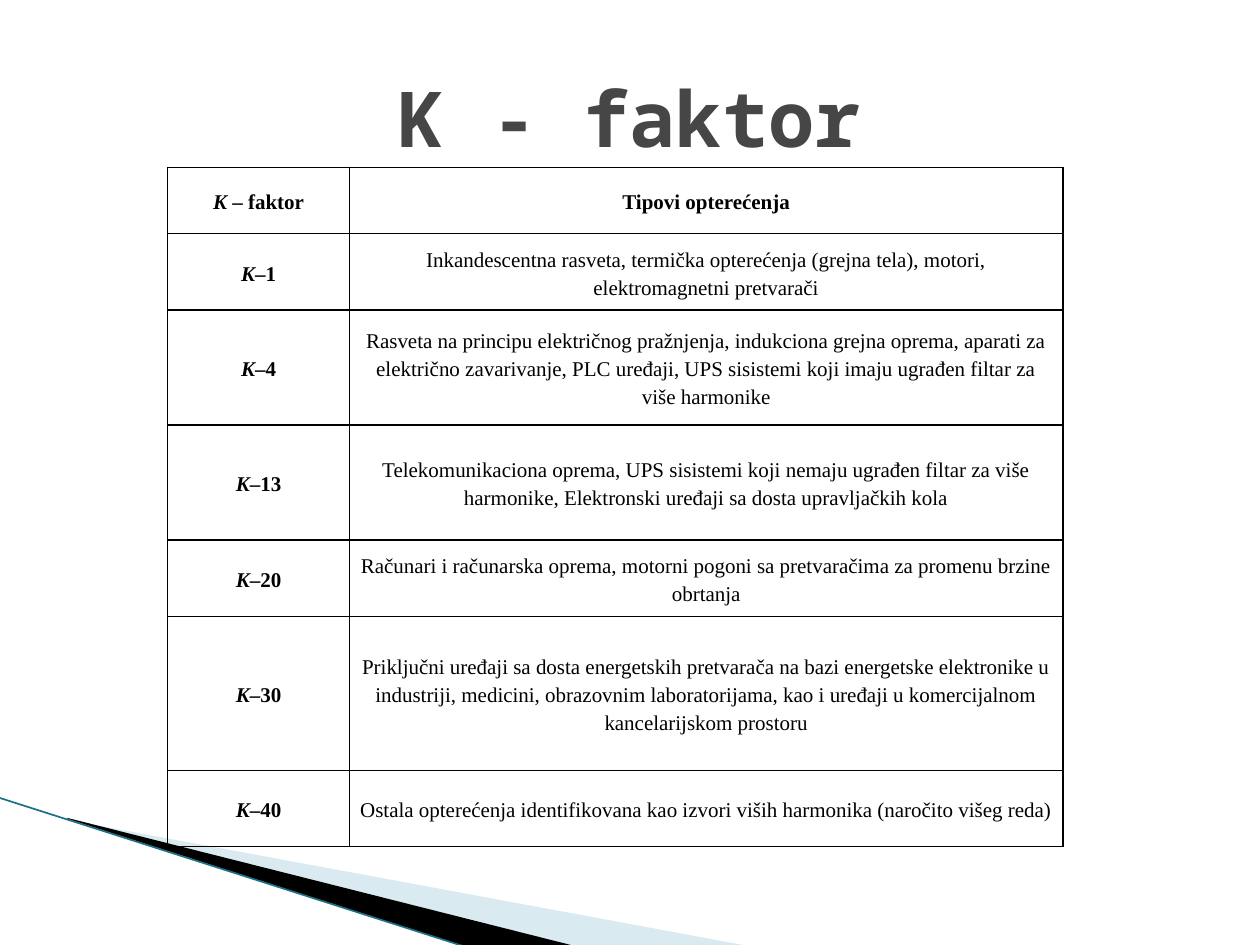
from lxml.etree import SubElement
from pptx import Presentation
from pptx.dml.color import RGBColor
from pptx.enum.shapes import MSO_CONNECTOR
from pptx.enum.text import MSO_ANCHOR, PP_ALIGN
from pptx.oxml.ns import qn
from pptx.util import Pt

COLORS = {
    "title": "464646",
    "text": "000000",
    "border": "000000",
    "pale": "A0CBDC",
    "dark": "000000",
    "edge": "1B7085",
}
TITLE = "K - faktor"
HEADER = (("K ", "– faktor"), "Tipovi opterećenja")
ROWS = [
    (37.8, *HEADER),
    (43.8, ("K", "–1"), "Inkandescentna rasveta, termička opterećenja (grejna tela), motori, elektromagnetni pretvarači"),
    (65.6, ("K", "–4"), "Rasveta na principu električnog pražnjenja, indukciona grejna oprema, aparati za električno zavarivanje, PLC uređaji, UPS sisistemi koji imaju ugrađen filtar za više harmonike"),
    (65.8, ("K", "–13"), "Telekomunikaciona oprema, UPS sisistemi koji nemaju ugrađen filtar za više harmonike, Elektronski uređaji sa dosta upravljačkih kola"),
    (43.8, ("K", "–20"), "Računari i računarska oprema, motorni pogoni sa pretvaračima za promenu brzine obrtanja"),
    (87.8, ("K", "–30"), "Priključni uređaji sa dosta energetskih pretvarača na bazi energetske elektronike u industriji, medicini, obrazovnim laboratorijama, kao i uređaji u komercijalnom kancelarijskom prostoru"),
    (43.6, ("K", "–40"), "Ostala opterećenja identifikovana kao izvori viših harmonika (naročito višeg reda)"),
]
COLUMNS = [104, 407.6]
TABLE_LEFT, TABLE_TOP = 95.8, 95.6
WEDGES = [
    ("pale", 40, (56.2, 393.8, 299.5, 113.8), [(39.6, 468.7), (428.4, 540.7), (328.3, 540.7), (39.6, 468)]),
    ("dark", 100, (-4.3, 455.8, 299.5, 66.2), [(38.2, 467.3), (329, 540.7), (267.8, 541.4), (38.9, 468)]),
]
EDGE = [(-0.7, 455.8), (267.1, 541.4)]


def color(name):
    return RGBColor.from_string(COLORS[name])


def add_text(paragraph, text, *, font, size, fill, bold=False, italic=False):
    paragraph.alignment = PP_ALIGN.CENTER
    run = paragraph.add_run()
    run.text = text
    run.font.name = font
    run.font.size = Pt(size)
    run.font.bold = bold
    run.font.italic = italic
    run.font.color.rgb = color(fill)


def set_frame(shape, frame):
    left, top, width, height = map(Pt, frame)
    outline = shape.element.find(f".//{qn('a:path')}")
    for point in outline.iter(qn("a:pt")):
        point.set("x", str(int(point.get("x")) + shape.left - left))
        point.set("y", str(int(point.get("y")) + shape.top - top))
    outline.set("w", str(width))
    outline.set("h", str(height))
    shape.left, shape.top, shape.width, shape.height = left, top, width, height


def add_wedge(slide, fill, opacity, frame, points):
    corners = [(Pt(x), Pt(y)) for x, y in points]
    builder = slide.shapes.build_freeform(*corners[0])
    builder.add_line_segments(corners[1:], close=True)
    shape = builder.convert_to_shape()
    set_frame(shape, frame)
    shape.shadow.inherit = False
    shape.line.fill.background()
    shape.fill.solid()
    shape.fill.fore_color.rgb = color(fill)
    if opacity < 100:
        fill_color = shape.element.spPr.find(qn("a:solidFill"))[0]
        SubElement(fill_color, qn("a:alpha")).set("val", str(opacity * 1000))


def add_edge(slide):
    ends = [Pt(value) for point in EDGE for value in point]
    connector = slide.shapes.add_connector(MSO_CONNECTOR.STRAIGHT, *ends)
    connector.line.color.rgb = color("edge")
    connector.line.width = Pt(0.95)
    SubElement(connector.element.spPr, qn("a:effectLst"))


def format_cell(cell):
    properties = cell._tc.get_or_add_tcPr()
    for side in ("lnL", "lnR", "lnT", "lnB"):
        border = SubElement(properties, qn(f"a:{side}"), w=str(Pt(1)))
        fill = SubElement(border, qn("a:solidFill"))
        SubElement(fill, qn("a:srgbClr"), val=COLORS["border"])
    cell.fill.background()
    cell.margin_left = cell.margin_right = Pt(5)
    cell.margin_top = cell.margin_bottom = 0
    cell.vertical_anchor = MSO_ANCHOR.MIDDLE


def add_factor_table(slide):
    heights = [row[0] for row in ROWS]
    frame = slide.shapes.add_table(
        len(ROWS), len(COLUMNS), Pt(TABLE_LEFT), Pt(TABLE_TOP), Pt(sum(COLUMNS)), Pt(sum(heights))
    )
    table = frame.table
    table.first_row = table.horz_banding = False
    for column, width in zip(table.columns, COLUMNS):
        column.width = Pt(width)
    style = dict(font="Times New Roman", size=12, fill="text")
    for index, (height, (symbol, suffix), loads) in enumerate(ROWS):
        table.rows[index].height = Pt(height)
        factor_cell, load_cell = table.cell(index, 0), table.cell(index, 1)
        for cell in (factor_cell, load_cell):
            format_cell(cell)
            cell.text_frame.paragraphs[0].line_spacing = 1.2
        factor = factor_cell.text_frame.paragraphs[0]
        add_text(factor, symbol, bold=True, italic=True, **style)
        add_text(factor, suffix, bold=True, **style)
        add_text(load_cell.text_frame.paragraphs[0], loads, bold=index == 0, **style)


def format_title(title):
    title.left, title.top, title.width, title.height = Pt(36), Pt(21.6), Pt(648), Pt(90)
    title.text_frame.vertical_anchor = MSO_ANCHOR.MIDDLE
    add_text(title.text_frame.paragraphs[0], TITLE, font="Noto Sans Mono", size=44, fill="title", bold=True)
    title.element.getparent().append(title.element)


def main():
    presentation = Presentation()
    presentation.slide_width, presentation.slide_height = Pt(720), Pt(540)
    slide = presentation.slides.add_slide(presentation.slide_layouts[5])
    for wedge in WEDGES:
        add_wedge(slide, *wedge)
    add_edge(slide)
    add_factor_table(slide)
    format_title(slide.shapes.title)
    presentation.save("out.pptx")


if __name__ == "__main__":
    main()
